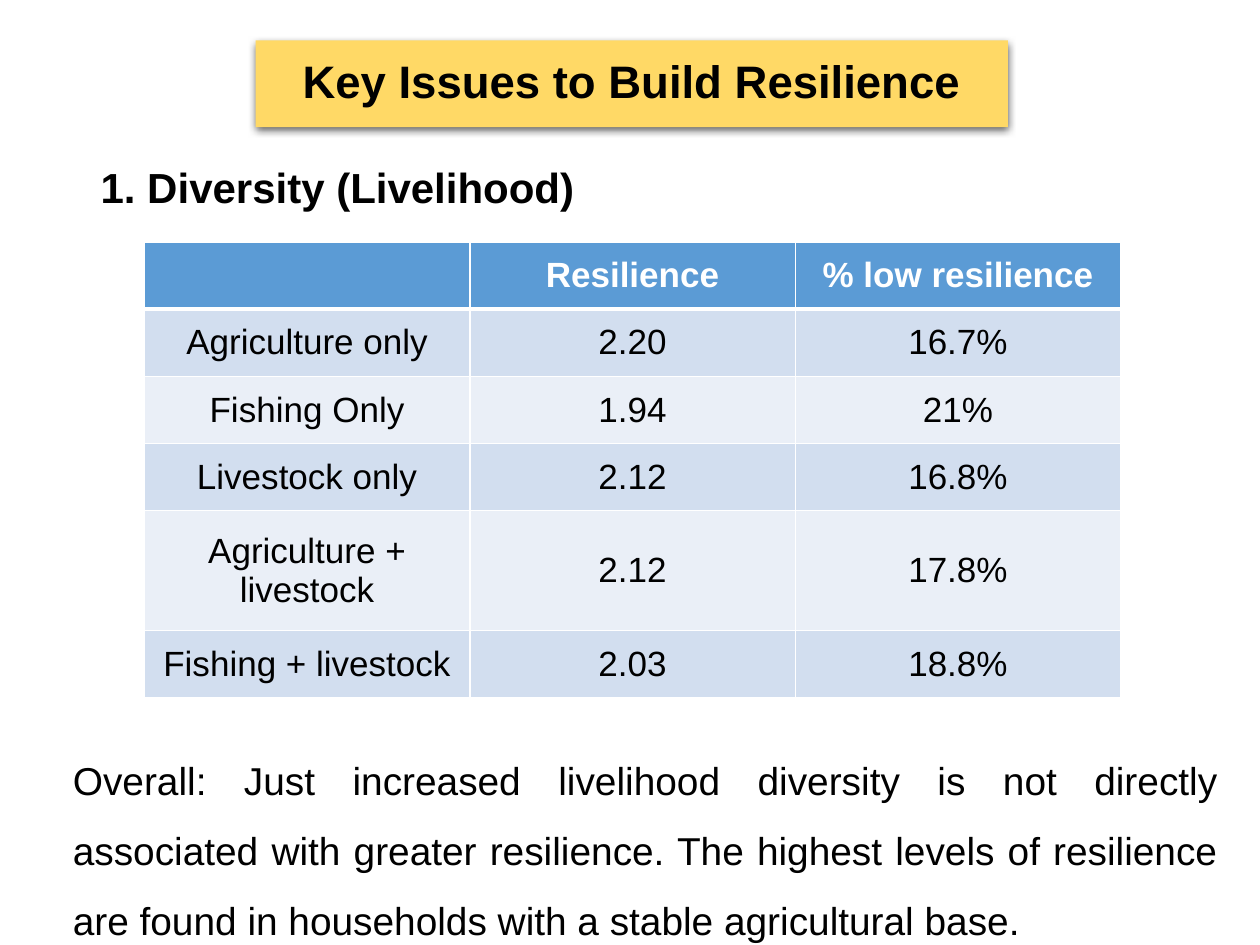
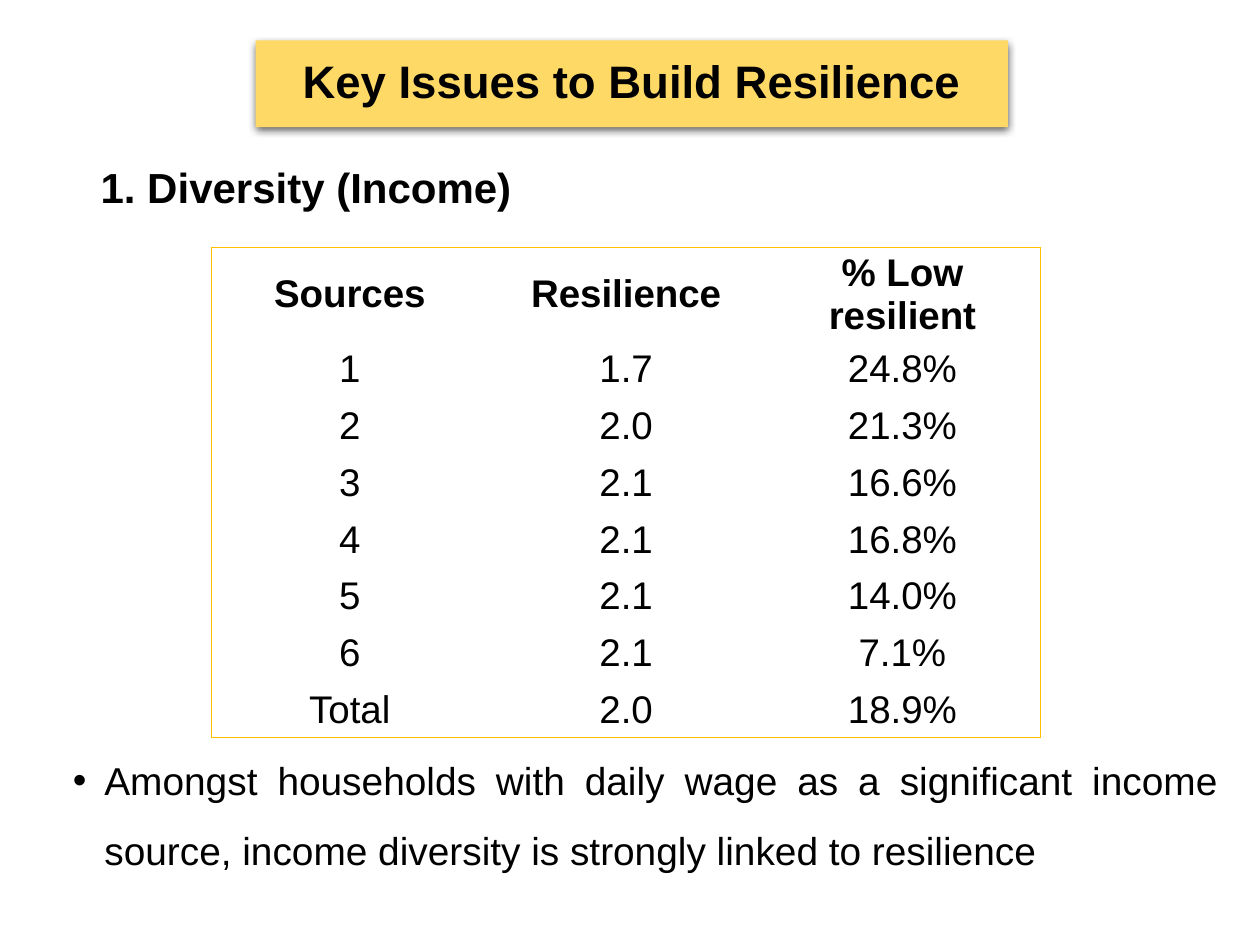
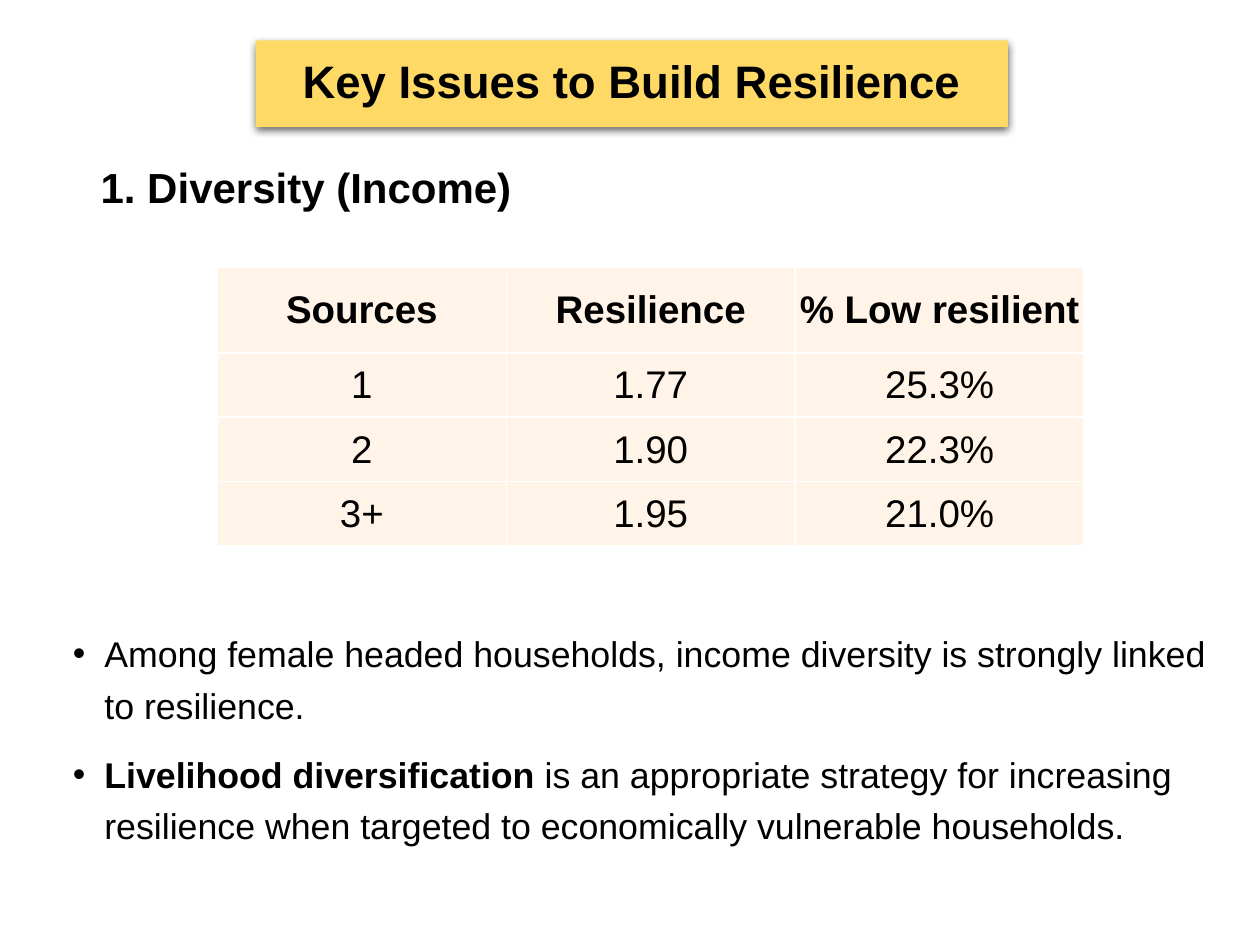
from lxml import etree
from pptx import Presentation
from pptx.dml.color import RGBColor
from pptx.enum import shapes, text
from pptx.oxml.ns import qn
from pptx.util import Pt

BLACK = RGBColor(0x00, 0x00, 0x00)
WHITE = RGBColor(0xFF, 0xFF, 0xFF)
GOLD = RGBColor(0xFF, 0xC0, 0x00)
BANNER_YELLOW = RGBColor(0xFF, 0xD9, 0x66)
HEADER_BLUE = RGBColor(0x5B, 0x9B, 0xD5)
BAND_DARK = RGBColor(0xD2, 0xDE, 0xEF)
BAND_LIGHT = RGBColor(0xEA, 0xEF, 0xF7)
CREAM = RGBColor(0xFF, 0xF4, 0xE7)

FONT = "Arial"
PLAIN_TABLE_STYLE = "{2D5ABB26-0587-4C30-8999-92F81FD0307C}"
BANNER_BOX = (146.16, 23.04, 429.84, 49.68)
HEADING_BOX = (50.4, 92.16, 620.64, 36.72)
SOURCE_HEADER = ("Sources", "Resilience", "% Low resilient")
TIGHT_MARGINS = (0.72, 0.72, 0.72, 0)
DEFAULT_MARGINS = (7.2, 3.6, 7.2, 3.6)


def points(box):
    return [Pt(length) for length in box]


def add_run(paragraph, words, size, color=BLACK, bold=False):
    run = paragraph.add_run()
    run.text = words
    run.font.name = FONT
    run.font.size = Pt(size)
    run.font.bold = bold
    run.font.color.rgb = color


def add_shadow(shape):
    shape.shadow.inherit = False
    effects = shape._element.spPr.find(qn("a:effectLst"))
    shadow = etree.SubElement(
        effects, qn("a:outerShdw"), blurRad=str(Pt(4.5)), dist=str(Pt(1.5)),
        dir="5400000", algn="t", rotWithShape="0")
    color = etree.SubElement(shadow, qn("a:srgbClr"), val=str(BLACK))
    etree.SubElement(color, qn("a:alpha"), val="63000")


def add_banner(slide, box):
    banner = slide.shapes.add_shape(shapes.MSO_SHAPE.RECTANGLE, *points(box))
    banner.fill.solid()
    banner.fill.fore_color.rgb = BANNER_YELLOW
    banner.line.fill.background()
    add_shadow(banner)
    frame = banner.text_frame
    frame.vertical_anchor = text.MSO_ANCHOR.MIDDLE
    paragraph = frame.paragraphs[0]
    paragraph.alignment = text.PP_ALIGN.CENTER
    paragraph.line_spacing = 0.9
    add_run(paragraph, "Key Issues to Build Resilience", 26, bold=True)


def add_text_box(slide, box):
    frame = slide.shapes.add_textbox(*points(box)).text_frame
    frame.word_wrap = True
    return frame


def add_heading(slide, box, topic):
    paragraph = add_text_box(slide, box).paragraphs[0]
    paragraph.line_spacing = 0.9
    add_run(paragraph, f"1. Diversity ({topic})", 24, bold=True)


def add_bullet(paragraph):
    properties = paragraph._p.get_or_add_pPr()
    properties.set("marL", str(Pt(18)))
    properties.set("indent", str(Pt(-18)))
    etree.SubElement(properties, qn("a:buFont"), typeface=FONT)
    etree.SubElement(properties, qn("a:buChar"), char="•")


def add_findings(slide, box, findings, size, spacing, alignment, bulleted=True):
    frame = add_text_box(slide, box)
    for index, runs in enumerate(findings):
        paragraph = frame.add_paragraph() if index else frame.paragraphs[0]
        if bulleted:
            add_bullet(paragraph)
        if index:
            paragraph.space_before = Pt(10)
        paragraph.line_spacing = spacing
        paragraph.alignment = alignment
        for words, bold in runs:
            add_run(paragraph, words, size, bold=bold)


def set_borders(cell, borders):
    properties = cell._tc.get_or_add_tcPr()
    for index, (side, border) in enumerate(zip("LRTB", borders)):
        line = etree.Element(qn(f"a:ln{side}"))
        if border:
            color, width = border
            line.set("w", str(Pt(width)))
            fill = etree.SubElement(line, qn("a:solidFill"))
            etree.SubElement(fill, qn("a:srgbClr"), val=str(color))
        else:
            etree.SubElement(line, qn("a:noFill"))
        properties.insert(index, line)


def grid_borders(row, column, last_row, last_column):
    return [(WHITE, 1)] * 4


def header_rule_borders(row, column, last_row, last_column):
    thin, thick = (WHITE, 1), (WHITE, 3)
    return thin, thin, thick if row == 1 else thin, thick if row == 0 else thin


def outline_borders(row, column, last_row, last_column):
    edges = (column == 0, column == last_column, row == 0, row == last_row)
    return [(GOLD, 0.5) if edge else None for edge in edges]


def add_data_table(slide, left, top, column_width, row_heights, rows, size,
                   fills, borders, margins=TIGHT_MARGINS, header_color=BLACK):
    row_count, column_count = len(rows), len(rows[0])
    box = (left, top, column_width * column_count, sum(row_heights))
    table = slide.shapes.add_table(row_count, column_count, *points(box)).table
    table._tbl.tblPr.find(qn("a:tableStyleId")).text = PLAIN_TABLE_STYLE
    table.horz_banding = False
    for column in table.columns:
        column.width = Pt(column_width)
    for row, values in enumerate(rows):
        table.rows[row].height = Pt(row_heights[row])
        for column, value in enumerate(values):
            cell = table.cell(row, column)
            cell.vertical_anchor = text.MSO_ANCHOR.MIDDLE
            (cell.margin_left, cell.margin_top,
             cell.margin_right, cell.margin_bottom) = points(margins)
            fill = fills[row]
            if fill:
                cell.fill.solid()
                cell.fill.fore_color.rgb = fill
            else:
                cell.fill.background()
            set_borders(cell, borders(row, column, row_count - 1, column_count - 1))
            if value:
                paragraph = cell.text_frame.paragraphs[0]
                paragraph.alignment = text.PP_ALIGN.CENTER
                header = row == 0
                add_run(paragraph, value, size, header_color if header else BLACK, header)


def add_issue_slide(presentation, topic):
    slide = presentation.slides.add_slide(presentation.slide_layouts[6])
    add_heading(slide, HEADING_BOX, topic)
    add_banner(slide, BANNER_BOX)
    return slide


def build_livelihood_slide(presentation):
    slide = add_issue_slide(presentation, "Livelihood")
    add_findings(
        slide, (34.56, 415.44, 668.88, 127.44),
        [[("Overall: Just increased livelihood diversity is not directly associated "
           "with greater resilience. The highest levels of resilience are found in "
           "households with a stable agricultural base.", False)]],
        22.2, 1.5, text.PP_ALIGN.JUSTIFY, bulleted=False)
    rows = [
        ("", "Resilience", "% low resilience"),
        ("Agriculture only", "2.20", "16.7%"),
        ("Fishing Only", "1.94", "21%"),
        ("Livestock only", "2.12", "16.8%"),
        ("Agriculture + livestock", "2.12", "17.8%"),
        ("Fishing + livestock", "2.03", "18.8%"),
    ]
    heights = [38.4] * 4 + [68.4, 38.4]
    fills = [HEADER_BLUE] + [BAND_DARK, BAND_LIGHT] * 2 + [BAND_DARK]
    add_data_table(slide, 82.5, 138.24, 186, heights, rows, 20, fills,
                   header_rule_borders, DEFAULT_MARGINS, WHITE)


def build_wage_income_slide(presentation):
    slide = add_issue_slide(presentation, "Income")
    add_findings(
        slide, (34.56, 415.44, 668.88, 102.24),
        [[("Amongst households with daily wage as a significant income source, "
           "income diversity is strongly linked to resilience", False)]],
        22.2, 1.5, text.PP_ALIGN.JUSTIFY)
    rows = [
        SOURCE_HEADER,
        ("1", "1.7", "24.8%"),
        ("2", "2.0", "21.3%"),
        ("3", "2.1", "16.6%"),
        ("4", "2.1", "16.8%"),
        ("5", "2.1", "14.0%"),
        ("6", "2.1", "7.1%"),
        ("Total", "2.0", "18.9%"),
    ]
    add_data_table(slide, 120.96, 141.12, 157.9, [39.6] + [32.4] * 7, rows, 22,
                   [None] * len(rows), outline_borders)


def build_female_headed_slide(presentation):
    slide = add_issue_slide(presentation, "Income")
    add_findings(
        slide, (34.56, 352.8, 668.88, 161.28),
        [[("Among female headed households, income diversity is strongly linked "
           "to resilience.", False)],
         [("Livelihood diversification", True),
          (" is an appropriate strategy for increasing resilience when targeted "
           "to economically vulnerable households.", False)]],
        20.4, 1.2, text.PP_ALIGN.LEFT)
    rows = [
        SOURCE_HEADER,
        ("1", "1.77", "25.3%"),
        ("2", "1.90", "22.3%"),
        ("3+", "1.95", "21.0%"),
    ]
    add_data_table(slide, 124.2, 152.64, 165.1, [48.96] + [36.72] * 3, rows, 22,
                   [CREAM] * len(rows), grid_borders)


def main():
    presentation = Presentation()
    presentation.slide_width = Pt(720)
    presentation.slide_height = Pt(540)
    build_livelihood_slide(presentation)
    build_wage_income_slide(presentation)
    build_female_headed_slide(presentation)
    presentation.save("out.pptx")


if __name__ == "__main__":
    main()
